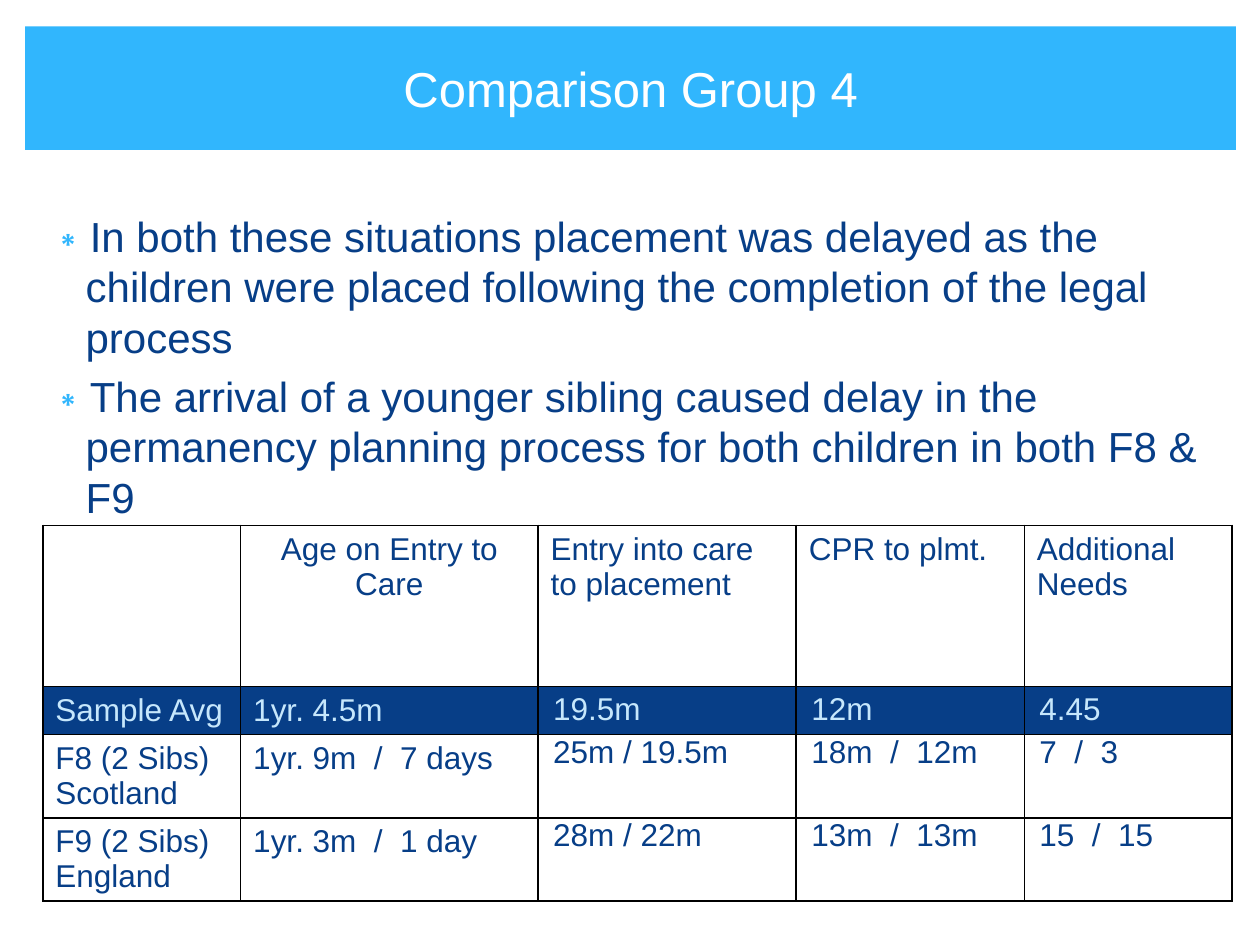
from dataclasses import dataclass

from lxml import etree
from pptx import Presentation
from pptx import util as u
from pptx.dml.color import RGBColor
from pptx.enum import text as t
from pptx.oxml import ns


@dataclass(frozen=True)
class Theme:
    font: str = "Arial"
    sky: str = "31B6FD"
    navy: str = "073E87"
    pale: str = "C6E7FC"
    white: str = "FFFFFF"
    rule: str = "000000"
    head: int = 28
    body: int = 24
    cell: int = 18


THEME = Theme()
SIZE = (10, 7.5)
TITLE = "Comparison Group 4"
POINTS = [
    "In both these situations placement was delayed as the children were "
    "placed following the completion of the legal process",
    "The arrival of a younger sibling caused delay in the permanency "
    "planning process for both children in both F8 & F9",
]
ROWS = [
    ["", "Age on Entry to Care", "Entry into care to placement",
     "CPR to plmt.", "Additional Needs"],
    ["Sample Avg", "1yr. 4.5m", "19.5m", "12m", "4.45"],
    ["F8 (2 Sibs) Scotland", "1yr. 9m  /  7 days", "25m / 19.5m",
     "18m  /  12m", "7  /  3"],
    ["F9 (2 Sibs)\nEngland", "1yr. 3m  /  1 day", "28m / 22m",
     "13m  /  13m", "15  /  15"],
]
WIDTHS = [1.57, 2.36, 2.05, 1.81, 1.65]
HEIGHTS = [1.28, 0.38, 0.66, 0.66]
AVERAGE = 1  # row with the dark band
FIRST = 2  # first column of tight figures


def paint(thing, color):
    thing.fill.solid()
    thing.fill.fore_color.rgb = RGBColor.from_string(color)


def place(shape, *box):
    shape.left, shape.top, shape.width, shape.height = map(u.Inches, box)


def write(frame, lines, size, color, align=t.PP_ALIGN.LEFT,
          before=0, after=0, pitch=1.0):
    frame.text = "\n".join(lines)
    for para in frame.paragraphs:
        para.alignment = align
        para.space_before, para.space_after = u.Pt(before), u.Pt(after)
        para.line_spacing = pitch
        for font in [para.font] + [run.font for run in para.runs]:
            font.name, font.size = THEME.font, u.Pt(size)
            font.color.rgb = RGBColor.from_string(color)


def bullet(para):
    props = para._p.get_or_add_pPr()
    props.set("marL", str(u.Inches(0.3)))
    props.set("indent", str(-u.Inches(0.3)))
    # Bullet parts stand before the default run format.
    base = props.find(ns.qn("a:defRPr"))
    tint = etree.Element(ns.qn("a:buClr"))
    etree.SubElement(tint, ns.qn("a:srgbClr"), val=THEME.sky)
    base.addprevious(tint)
    base.addprevious(etree.Element(ns.qn("a:buChar"), char="∗"))


def border(cell):
    props = cell._tc.get_or_add_tcPr()
    for i, side in enumerate("LRTB"):
        line = etree.Element(ns.qn("a:ln" + side), w=str(u.Pt(1)))
        fill = etree.SubElement(line, ns.qn("a:solidFill"))
        etree.SubElement(fill, ns.qn("a:srgbClr"), val=THEME.rule)
        props.insert(i, line)


def add_grid(slide):
    box = map(u.Inches, (0.34, 4.17, sum(WIDTHS), sum(HEIGHTS)))
    frame = slide.shapes.add_table(len(ROWS), len(WIDTHS), *box)
    grid = frame.table
    for col, width in zip(grid.columns, WIDTHS):
        col.width = u.Inches(width)
    for row, height in zip(grid.rows, HEIGHTS):
        row.height = u.Inches(height)
    for r, row in enumerate(ROWS):
        for c, words in enumerate(row):
            cell = grid.cell(r, c)
            dark, tight = r == AVERAGE, r > 0 and c >= FIRST
            paint(cell, THEME.navy if dark else THEME.white)
            border(cell)
            if tight:
                cell.margin_left = cell.margin_right = u.Inches(0.12)
                cell.margin_top = cell.margin_bottom = 0
            mid = r == 0 and c == 1
            write(cell.text_frame, words.split("\n"), THEME.cell,
                  THEME.pale if dark else THEME.navy,
                  align=t.PP_ALIGN.CENTER if mid else t.PP_ALIGN.LEFT,
                  after=10 if dark and tight else 0,
                  pitch=1.15 if dark and tight else 1.0)
    return frame


def main():
    deck = Presentation()
    deck.slide_width, deck.slide_height = map(u.Inches, SIZE)
    slide = deck.slides.add_slide(deck.slide_layouts[1])

    title = slide.shapes.title
    place(title, 0.2, 0.21, 9.61, 0.98)
    paint(title, THEME.sky)
    write(title.text_frame, [TITLE], THEME.head, THEME.white,
          align=t.PP_ALIGN.CENTER)
    title.text_frame.vertical_anchor = t.MSO_ANCHOR.MIDDLE

    body = slide.placeholders[1]
    place(body, 0.28, 1.62, 9.45, 3.15)
    body.text_frame.auto_size = t.MSO_AUTO_SIZE.NONE
    write(body.text_frame, POINTS, THEME.body, THEME.navy, before=5)
    for para in body.text_frame.paragraphs:
        bullet(para)

    grid = add_grid(slide)
    grid.element.addnext(body.element)  # list lies over the table
    deck.save("out.pptx")


if __name__ == "__main__":
    main()
